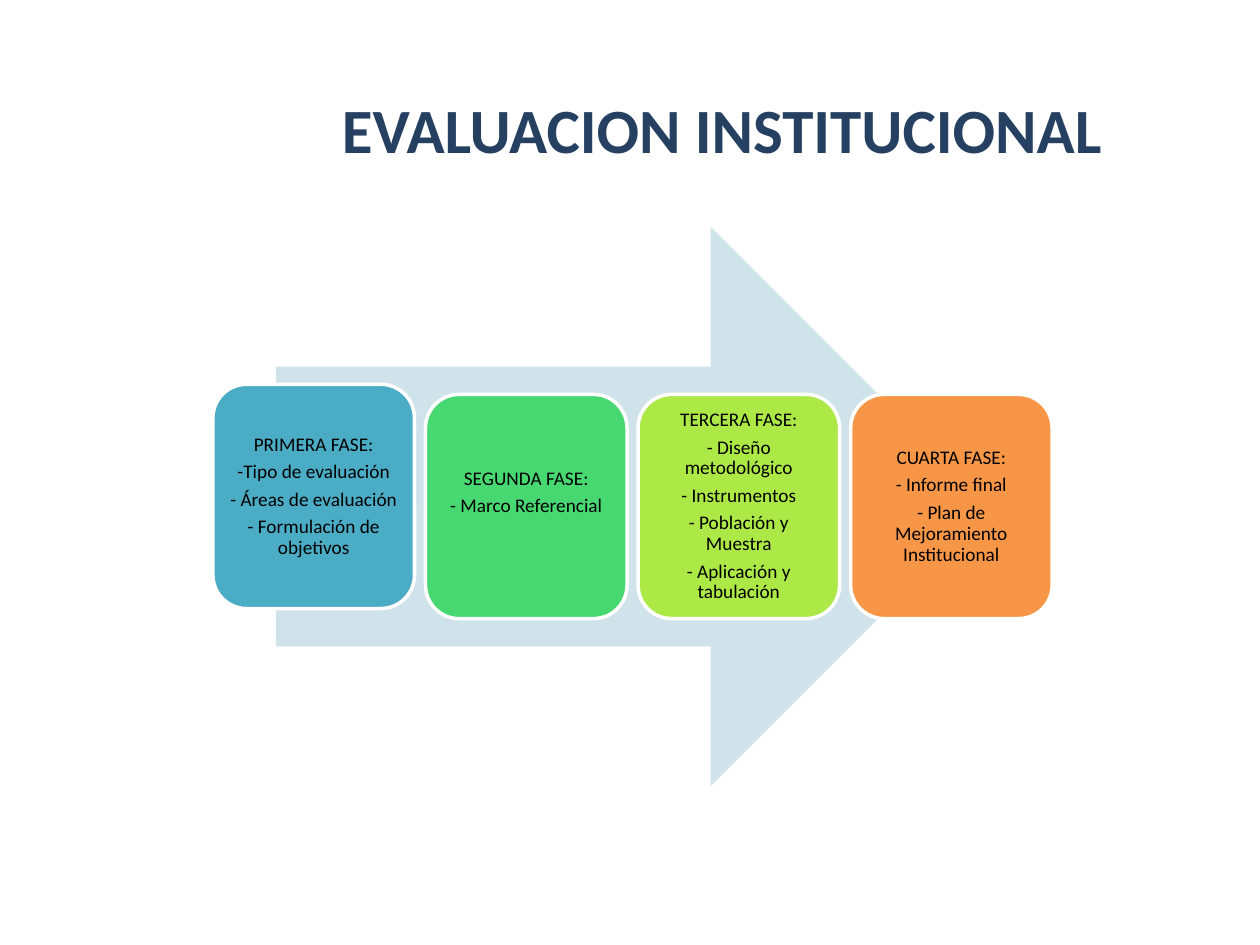
from dataclasses import dataclass

from pptx import Presentation
from pptx.dml.color import RGBColor
from pptx.enum.shapes import MSO_SHAPE
from pptx.enum.text import MSO_ANCHOR, PP_ALIGN
from pptx.util import Inches, Pt

CARD_LEFT, CARD_TOP = 1.69, 3.13
CARD_W, CARD_H = 1.6, 1.78
CARD_PITCH = 1.687
INSET = 0.05


@dataclass
class Phase:
    lines: list[str]
    color: str
    rise: float = 0  # inches above the common row
    text_lift: float = 0  # extra bottom inset, inches


PHASES = [
    Phase(["PRIMERA FASE:", "-Tipo de evaluación", "- Áreas de evaluación",
           "- Formulación de objetivos"], "4BACC6", rise=0.08),
    Phase(["SEGUNDA FASE:", "- Marco Referencial"], "47D872", text_lift=0.22),
    Phase(["TERCERA FASE:", "- Diseño metodológico", "- Instrumentos",
           "- Población y Muestra", "- Aplicación y tabulación"], "ACE946"),
    Phase(["CUARTA FASE:", "- Informe final",
           "- Plan de Mejoramiento Institucional"], "F79646"),
]


def rgb(color: str) -> RGBColor:
    return RGBColor.from_string(color)


def write(tf, lines: list[str], *, size: float, color: str, bold: bool = False,
          spacing: float = 1, after: float = 0) -> None:
    tf.word_wrap = True
    tf.vertical_anchor = MSO_ANCHOR.MIDDLE
    for i, line in enumerate(lines):
        p = tf.add_paragraph() if i else tf.paragraphs[0]
        p.alignment = PP_ALIGN.CENTER
        p.line_spacing = spacing
        p.space_after = Pt(after)
        r = p.add_run()
        r.text = line
        r.font.name = "Calibri"
        r.font.size = Pt(size)
        r.font.bold = bold
        r.font.color.rgb = rgb(color)


def add_block(s, kind, left: float, top: float, width: float, height: float,
              fill: str):
    sp = s.shapes.add_shape(kind, Inches(left), Inches(top), Inches(width), Inches(height))
    sp.shadow.inherit = False
    sp.fill.solid()
    sp.fill.fore_color.rgb = rgb(fill)
    sp.line.fill.background()
    return sp


def add_phase(s, column: int, phase: Phase) -> None:
    sp = add_block(s, MSO_SHAPE.ROUNDED_RECTANGLE, CARD_LEFT + column * CARD_PITCH,
                   CARD_TOP - phase.rise, CARD_W, CARD_H, phase.color)
    sp.line.color.rgb = rgb("FFFFFF")
    sp.line.width = Pt(2)
    tf = sp.text_frame
    tf.margin_left = tf.margin_right = tf.margin_top = Inches(INSET)
    tf.margin_bottom = Inches(INSET + phase.text_lift)
    write(tf, phase.lines, size=11, color="000000", spacing=0.9, after=3.85)


def main() -> None:
    prs = Presentation()
    prs.slide_width, prs.slide_height = Inches(10), Inches(7.5)
    s = prs.slides.add_slide(prs.slide_layouts[5])

    title = s.shapes.title
    title.left, title.top = Inches(1.23), Inches(0.39)
    title.width, title.height = Inches(9), Inches(1.25)
    write(title.text_frame, ["EVALUACION INSTITUCIONAL"], size=36,
          color="254061", bold=True)

    add_block(s, MSO_SHAPE.RIGHT_ARROW, 2.19, 1.8, 5.67, 4.44, "D0E3EA")
    for column, phase in enumerate(PHASES):
        add_phase(s, column, phase)

    prs.save("out.pptx")


if __name__ == "__main__":
    main()
